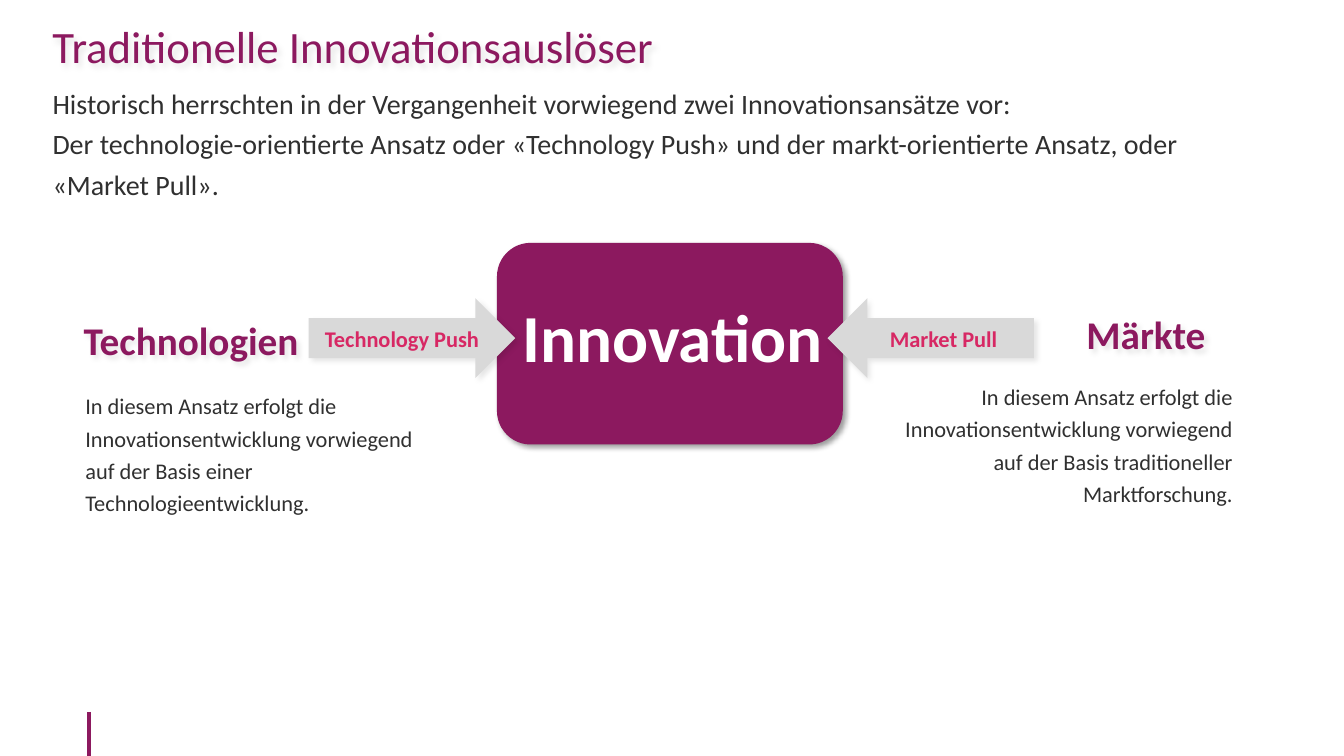
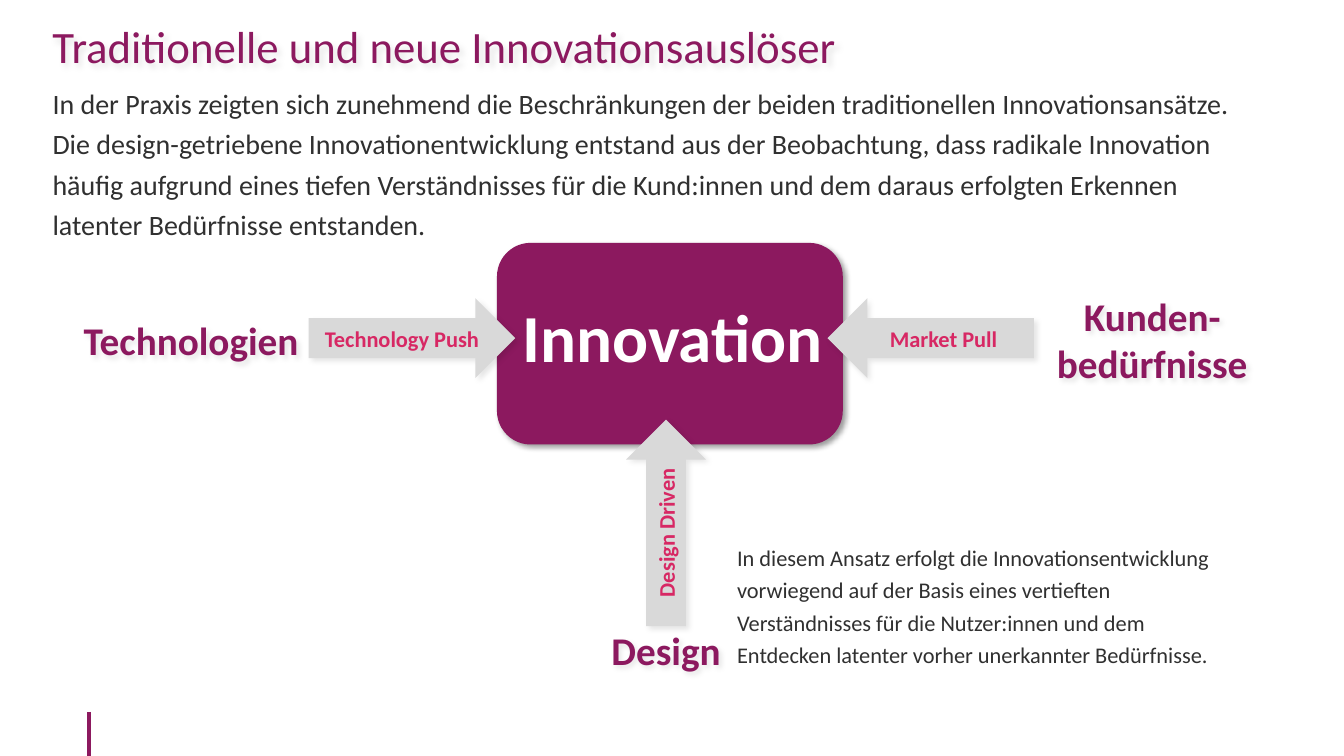
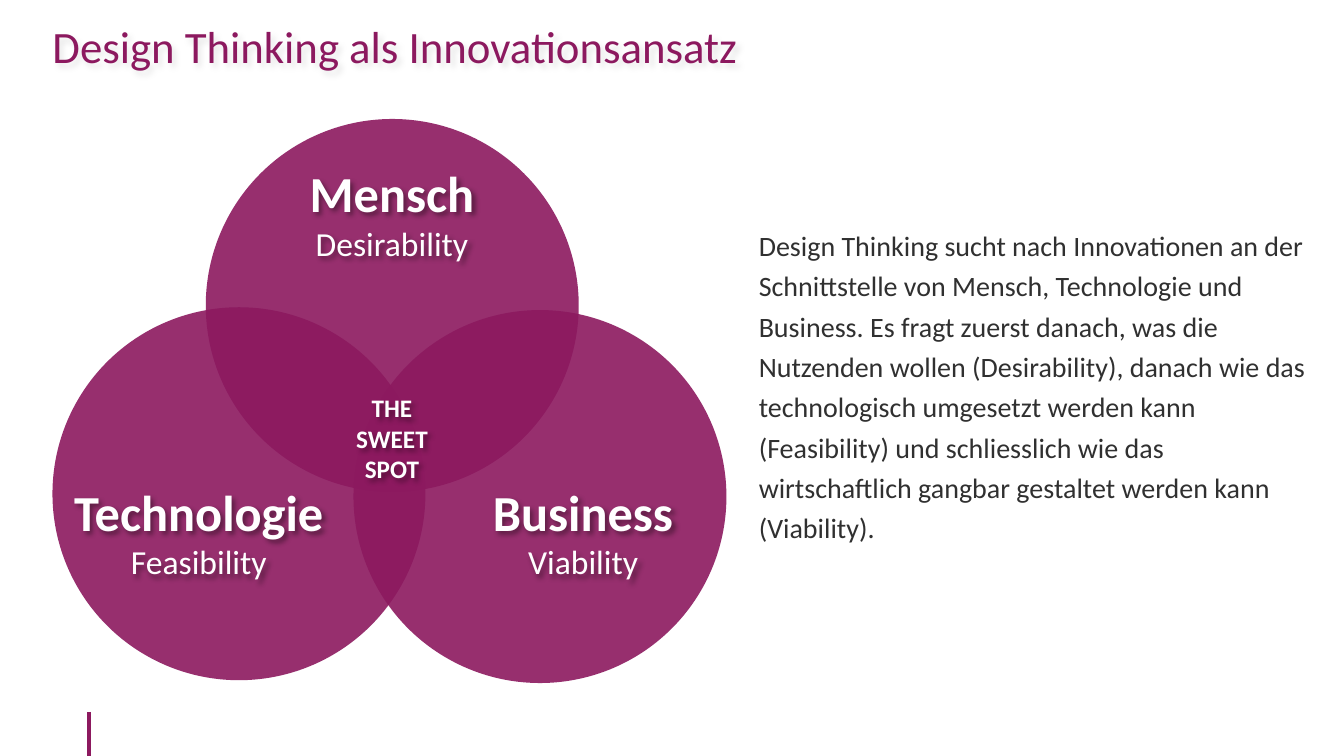
from dataclasses import dataclass

from lxml.etree import SubElement
from pptx import Presentation
from pptx.dml.color import RGBColor
from pptx.enum.shapes import MSO_CONNECTOR, MSO_SHAPE
from pptx.enum.text import MSO_ANCHOR, MSO_AUTO_SIZE, PP_ALIGN
from pptx.oxml.ns import qn
from pptx.util import Pt


@dataclass(frozen=True)
class Theme:
    font: str = "Calibri"
    plum: str = "8C195F"
    pink: str = "D72864"
    grey: str = "D9D9D9"
    ink: str = "303030"
    white: str = "FFFFFF"
    title: int = 32
    body: int = 20
    detail: int = 16
    heading: int = 28
    hero: int = 48
    circle_name: int = 36
    circle_note: int = 24
    sweet_spot: int = 18
    line_spacing: float = 1.2
    soft_shadow: int = 10
    strong_shadow: int = 40


THEME = Theme()
MARGIN = 37.5
ARROW_SIZE = (147.5, 57)
CIRCLE = 266.4


def box(left, top, width, height):
    return Pt(left), Pt(top), Pt(width), Pt(height)


def add_shadow(shape, opacity):
    shape.shadow.inherit = False
    effects = shape._element.spPr.find(qn("a:effectLst"))
    shadow = SubElement(effects, qn("a:outerShdw"), blurRad=str(Pt(4)), dist=str(Pt(3)),
                        dir="2700000", algn="tl", rotWithShape="0")
    black = SubElement(shadow, qn("a:srgbClr"), val="000000")
    SubElement(black, qn("a:alpha"), val=str(opacity * 1000))


def write(shape, lines, size, color, bold=False, align=PP_ALIGN.LEFT, spacing=None):
    frame = shape.text_frame
    frame.text = "\n".join(lines)
    for paragraph in frame.paragraphs:
        paragraph.alignment = align
        paragraph.line_spacing = spacing
        for run in paragraph.runs:
            run.font.name = THEME.font
            run.font.size = Pt(size)
            run.font.bold = bold
            run.font.color.rgb = RGBColor.from_string(color)


def add_figure(slide, preset, place, color, shadow=None):
    figure = slide.shapes.add_shape(preset, *box(*place))
    figure.fill.solid()
    figure.fill.fore_color.rgb = RGBColor.from_string(color)
    figure.line.fill.background()
    figure.shadow.inherit = False
    if shadow:
        add_shadow(figure, shadow)
    return figure


def add_label(slide, place, lines, size, color, wrap=False, align=PP_ALIGN.CENTER, shadow=None):
    label = slide.shapes.add_textbox(*box(*place))
    label.text_frame.word_wrap = wrap
    label.text_frame.auto_size = MSO_AUTO_SIZE.SHAPE_TO_FIT_TEXT
    write(label, lines, size, color, True, align)
    if shadow:
        add_shadow(label, shadow)
    return label


def add_heading(slide, place, text, wrap=False):
    add_label(slide, place, [text], THEME.heading, THEME.plum, wrap, shadow=THEME.soft_shadow)


def add_body(slide, place, lines, size, color=THEME.ink, align=PP_ALIGN.LEFT):
    body = slide.shapes.add_textbox(*box(*place))
    frame = body.text_frame
    frame.word_wrap = True
    frame.margin_left = frame.margin_top = frame.margin_right = frame.margin_bottom = 0
    write(body, lines, size, color, align=align, spacing=THEME.line_spacing)
    return body


def add_intro(slide, *lines):
    add_body(slide, (MARGIN, 57, 843, 54), lines, THEME.body)


def add_arrow(slide, left, top, rotation=0, text=None):
    arrow = add_figure(slide, MSO_SHAPE.RIGHT_ARROW, (left, top, *ARROW_SIZE),
                       THEME.grey, THEME.soft_shadow)
    arrow.rotation = rotation
    if text:
        arrow.text_frame.vertical_anchor = MSO_ANCHOR.MIDDLE
        write(arrow, [text], THEME.detail, THEME.pink, True, PP_ALIGN.CENTER)


def add_slide(deck, title):
    slide = deck.slides.add_slide(deck.slide_layouts[6])
    mark = slide.shapes.add_connector(MSO_CONNECTOR.STRAIGHT, Pt(63.5), Pt(508.5), Pt(63.5), Pt(540))
    mark.line.color.rgb = RGBColor.from_string(THEME.plum)
    mark.line.width = Pt(3)
    SubElement(mark._element.spPr, qn("a:effectLst"))
    heading = add_body(slide, (MARGIN, 1.5, 960 - MARGIN, 54), [title], THEME.title, THEME.plum)
    heading.text_frame.vertical_anchor = MSO_ANCHOR.MIDDLE
    add_shadow(heading, THEME.soft_shadow)
    return slide


def add_push_and_pull(slide):
    add_figure(slide, MSO_SHAPE.ROUNDED_RECTANGLE, (355, 173.5, 247, 144),
               THEME.plum, THEME.strong_shadow)
    add_heading(slide, (52, 222.5, 169, 41), "Technologien")
    add_label(slide, (364.5, 207.5, 232, 65.5), ["Innovation"], THEME.hero, THEME.white)
    add_arrow(slide, 220.5, 213, text="Technology Push")
    add_arrow(slide, 591, 213, 180)
    add_label(slide, (628, 228.5, 92, 26.5), ["Market Pull"], THEME.detail, THEME.pink)


def add_circle(slide, left, top):
    circle = add_figure(slide, MSO_SHAPE.OVAL, (left, top, CIRCLE, CIRCLE), THEME.plum)
    fill_color = circle._element.spPr.find(qn("a:solidFill"))[0]
    SubElement(fill_color, qn("a:alpha"), val="90000")


def add_circle_label(slide, place, name, note):
    label = add_label(slide, place, [name, note], THEME.circle_name, THEME.white,
                      shadow=THEME.strong_shadow)
    note_font = label.text_frame.paragraphs[1].runs[0].font
    note_font.size = Pt(THEME.circle_note)
    note_font.bold = False


def build_traditional(deck):
    slide = add_slide(deck, "Traditionelle Innovationsauslöser")
    add_push_and_pull(slide)
    add_heading(slide, (695.5, 218, 246, 41), "Märkte", wrap=True)
    add_intro(slide,
              "Historisch herrschten in der Vergangenheit vorwiegend zwei Innovationsansätze vor:",
              "Der technologie-orientierte Ansatz oder «Technology Push» und der "
              "markt-orientierte Ansatz, oder «Market Pull».")
    approach = "In diesem Ansatz erfolgt die Innovationsentwicklung vorwiegend auf der Basis "
    add_body(slide, (61, 276.5, 247, 54), [approach + "einer Technologieentwicklung."], THEME.detail)
    add_body(slide, (633.5, 270, 247, 54), [approach + "traditioneller Marktforschung."],
             THEME.detail, align=PP_ALIGN.RIGHT)


def build_new(deck):
    slide = add_slide(deck, "Traditionelle und neue Innovationsauslöser")
    add_push_and_pull(slide)
    add_heading(slide, (700, 205, 246, 75), "Kunden-bedürfnisse", wrap=True)
    add_heading(slide, (429, 443.5, 93.5, 41), "Design")
    add_arrow(slide, 402, 345, 270, "Design Driven")
    add_intro(slide,
              "In der Praxis zeigten sich zunehmend die Beschränkungen der beiden traditionellen "
              "Innovationsansätze. Die design-getriebene Innovationentwicklung entstand aus der "
              "Beobachtung, dass radikale Innovation häufig aufgrund eines tiefen Verständnisses "
              "für die Kund:innen und dem daraus erfolgten Erkennen latenter Bedürfnisse entstanden.")
    add_body(slide, (526.5, 385, 347, 54),
             ["In diesem Ansatz erfolgt die Innovationsentwicklung vorwiegend auf der Basis eines "
              "vertieften Verständnisses für die Nutzer:innen und dem Entdecken latenter vorher "
              "unerkannter Bedürfnisse."], THEME.detail)


def build_design_thinking(deck):
    slide = add_slide(deck, "Design Thinking als Innovationsansatz")
    for left, top in ((147, 85), (MARGIN, 219.5), (252.5, 221.5)):
        add_circle(slide, left, top)
    add_circle_label(slide, (213, 112.5, 134, 80), "Mensch", "Desirability")
    add_circle_label(slide, (44.5, 340, 195, 80), "Technologie", "Feasibility")
    add_circle_label(slide, (344, 340, 145, 80), "Business", "Viability")
    add_label(slide, (247, 277, 66, 72.5), ["THE", "SWEET", "SPOT"], THEME.sweet_spot,
              THEME.white, shadow=THEME.strong_shadow)
    add_body(slide, (542, 158.5, 402, 54),
             ["Design Thinking sucht nach Innovationen an der Schnittstelle von Mensch, Technologie "
              "und Business. Es fragt zuerst danach, was die Nutzenden wollen (Desirability), danach "
              "wie das technologisch umgesetzt werden kann (Feasibility) und schliesslich wie das "
              "wirtschaftlich gangbar gestaltet werden kann (Viability)."], THEME.body)


def main():
    deck = Presentation()
    deck.slide_width, deck.slide_height = Pt(960), Pt(540)
    build_traditional(deck)
    build_new(deck)
    build_design_thinking(deck)
    deck.save("out.pptx")


if __name__ == "__main__":
    main()
